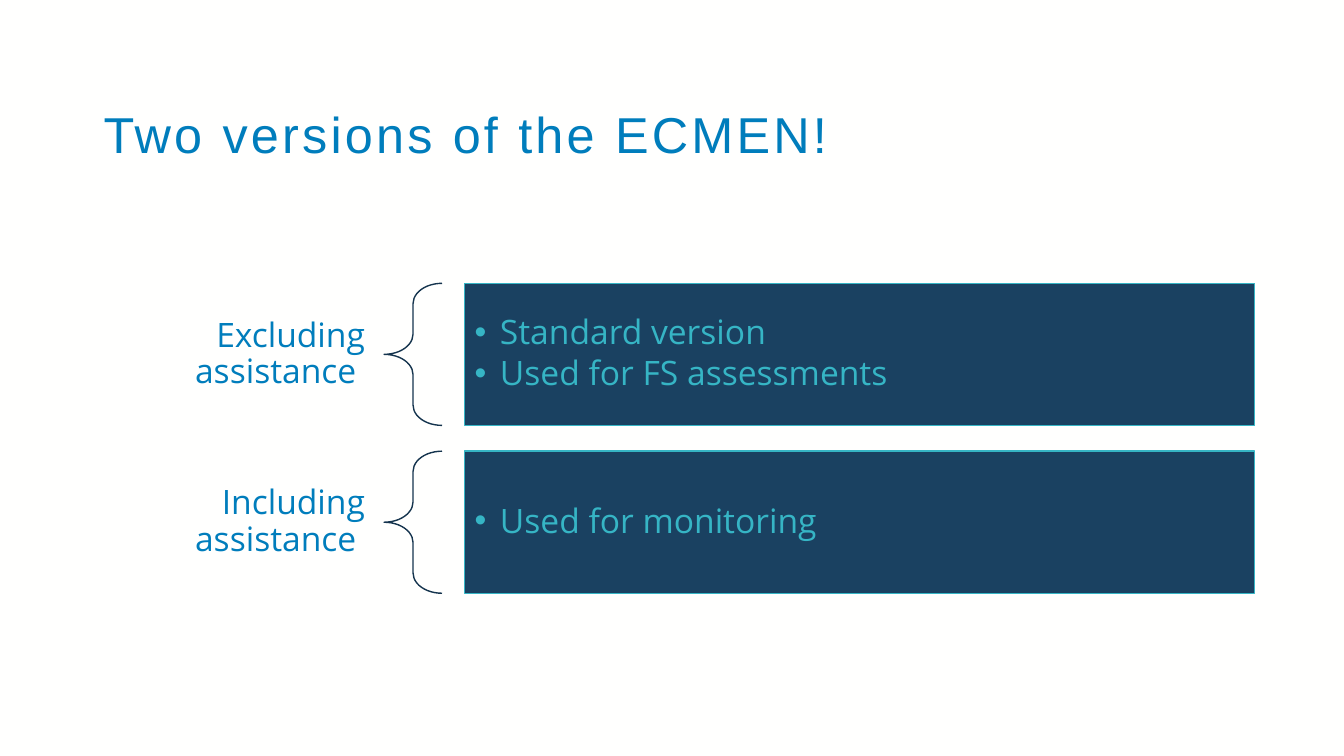
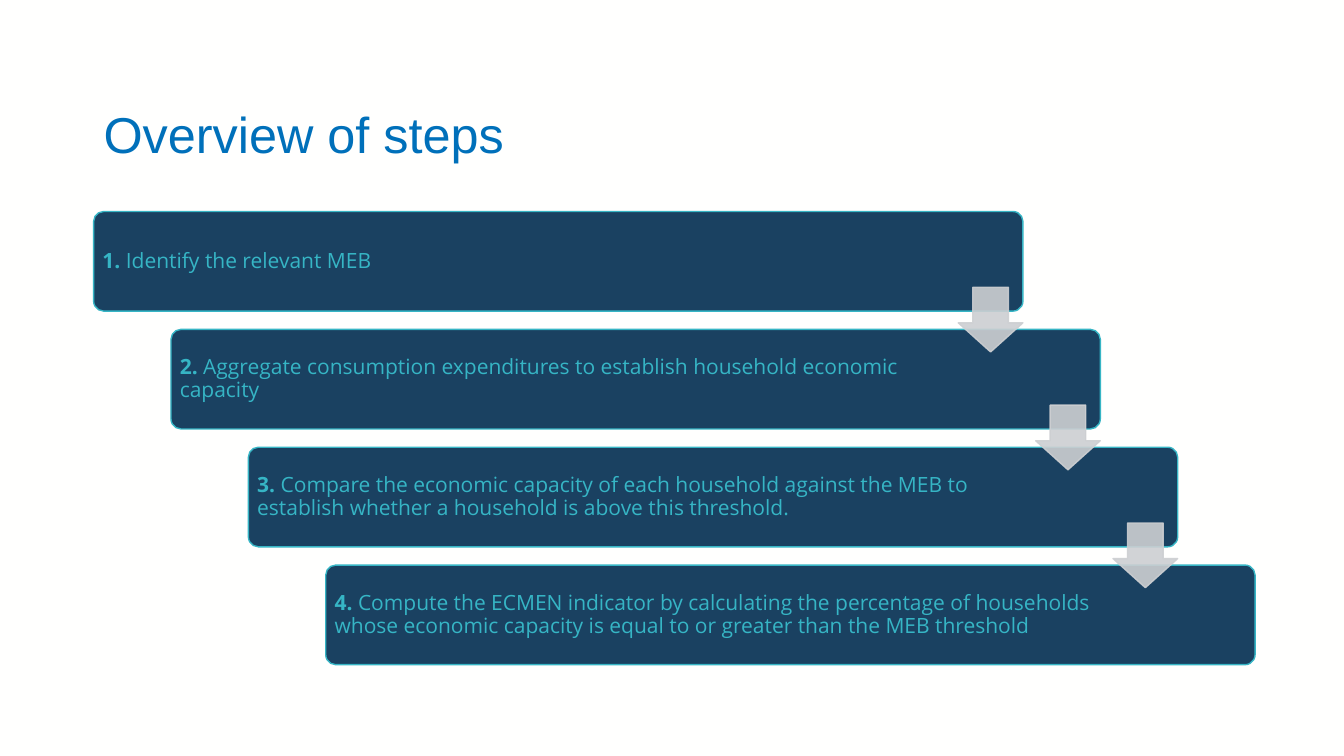
from dataclasses import dataclass

import pptx
import pptx.dml.color
import pptx.enum.shapes
import pptx.enum.text
import pptx.oxml.ns
import pptx.util
from lxml import etree

Cm = pptx.util.Cm
Pt = pptx.util.Pt
SHAPE = pptx.enum.shapes.MSO_SHAPE
ALIGN = pptx.enum.text.PP_ALIGN
qn = pptx.oxml.ns.qn

COLORS = {
    "page": "FFFFFE",
    "heading": "007DBC",
    "heading_alt": "0070BA",
    "panel": "1A4161",
    "accent": "36B5C5",
    "brace": "15344E",
    "arrow": "CDCFD2",
}
HEADING_FONT, BODY_FONT = "Arial", "Open Sans"
LEFT = 2.36  # shared left edge, in cm


@dataclass
class Area:
    left: float
    top: float
    width: float
    height: float

    def lengths(self) -> list:
        return [Cm(n) for n in (self.left, self.top, self.width, self.height)]


@dataclass
class Version:
    label: str
    points: list[str]


VERSIONS = [
    Version("Excluding assistance ", ["Standard version", "Used for FS assessments"]),
    Version("Including assistance ", ["Used for monitoring"]),
]
STEPS = [
    "Identify the relevant MEB",
    "Aggregate consumption expenditures to establish household economic capacity",
    "Compare the economic capacity of each household against the MEB to "
    "establish whether a household is above this threshold.",
    "Compute the ECMEN indicator by calculating the percentage of households "
    "whose economic capacity is equal to or greater than the MEB threshold",
]


def rgb(name: str) -> pptx.dml.color.RGBColor:
    return pptx.dml.color.RGBColor.from_string(COLORS[name])


def apply(target, formats: dict) -> None:
    for name, value in formats.items():
        setattr(target, name, value)


# Shared building blocks
def set_frame(box, insets: tuple) -> None:
    """Centre the text vertically; insets run left, top, right, bottom."""
    sides = ("margin_left", "margin_top", "margin_right", "margin_bottom")
    formats = {side: Cm(inset) for side, inset in zip(sides, insets)}
    formats |= {"word_wrap": True,
                "vertical_anchor": pptx.enum.text.MSO_ANCHOR.MIDDLE}
    apply(box.text_frame, formats)


def add_span(para, text: str, size: float, color: str,
             font: str = BODY_FONT, bold: bool = False):
    span = para.add_run()
    span.text = text
    apply(span.font, {"size": Pt(size), "name": font, "bold": bold})
    span.font.color.rgb = rgb(color)
    return span


def add_bullet(para) -> None:
    properties = para._p.get_or_add_pPr()
    indent = Cm(0.64)
    properties.set("marL", str(indent))
    properties.set("indent", str(-indent))
    etree.SubElement(properties, qn("a:buFont")).set("typeface", "Arial")
    etree.SubElement(properties, qn("a:buChar")).set("char", "•")


def add_figure(page, kind, area: Area, line: str, fill: str | None = None,
               adjustments: tuple = ()):
    figure = page.shapes.add_shape(kind, *area.lengths())
    figure.shadow.inherit = False
    for index, value in enumerate(adjustments):
        figure.adjustments[index] = value
    if fill:
        figure.fill.solid()
        figure.fill.fore_color.rgb = rgb(fill)
    else:
        figure.fill.background()
    figure.line.color.rgb = rgb(line)
    figure.line.width = Pt(1)
    return figure


def add_page(deck, title: str, color: str, tracking: float = 0):
    page = deck.slides.add_slide(deck.slide_layouts[6])
    page.background.fill.solid()
    page.background.fill.fore_color.rgb = rgb("page")
    box = page.shapes.add_textbox(*Area(LEFT, 1.85, 29.29, 3.2).lengths())
    set_frame(box, (0.25, 0.13, 0.25, 0.13))
    para = box.text_frame.paragraphs[0]
    para.line_spacing = 0.9
    span = add_span(para, title, 36, color, HEADING_FONT)
    if tracking:
        span.font._element.set("spc", str(round(tracking * 100)))
    return page


# Slide 1: a label, a brace and a panel for each version
def add_version(page, version: Version, top: float) -> None:
    height = 3.58
    label = page.shapes.add_textbox(*Area(LEFT, top, 7.32, height).lengths())
    set_frame(label, (0.48, 0.18, 0.48, 0.18))
    para = label.text_frame.paragraphs[0]
    apply(para, {"alignment": ALIGN.RIGHT, "line_spacing": 0.9})
    add_span(para, version.label, 24, "heading")

    add_figure(page, SHAPE.LEFT_BRACE, Area(9.68, top, 1.46, height),
               "brace", adjustments=(0.35, 0.5))

    panel = add_figure(page, SHAPE.RECTANGLE, Area(11.71, top, 19.91, height),
                       "accent", "panel")
    set_frame(panel, (0.25, 0.25, 0.25, 0.25))
    frame = panel.text_frame
    for index, point in enumerate(version.points):
        para = frame.add_paragraph() if index else frame.paragraphs[0]
        apply(para, {"alignment": ALIGN.LEFT, "line_spacing": 0.9,
                     "space_after": Pt(3.6)})
        add_bullet(para)
        add_span(para, point, 24, "accent")


def build_versions(deck) -> None:
    page = add_page(deck, "Two versions of the ECMEN!", "heading", 2.3)
    for index, version in enumerate(VERSIONS):
        add_version(page, version, 7.14 + index * 4.23)


# Slide 2: a staircase of cards joined by arrows
def add_step(page, number: int, text: str, area: Area) -> None:
    card = add_figure(page, SHAPE.ROUNDED_RECTANGLE, area,
                      "accent", "panel", (0.1,))
    set_frame(card, (0.15, 0.15, 3.73, 0.15))
    para = card.text_frame.paragraphs[0]
    apply(para, {"alignment": ALIGN.LEFT, "line_spacing": 0.9})
    add_span(para, f"{number}. ", 15, "accent", bold=True)
    add_span(para, text, 15, "accent")


def add_step_arrow(page, card: Area) -> None:
    size = 1.63
    area = Area(card.left + card.width - size, card.top + 1.91, size, size)
    arrow = add_figure(page, SHAPE.DOWN_ARROW, area, "arrow", "arrow", (0.55, 0.45))
    for color in arrow._element.spPr.iter(qn("a:srgbClr")):
        etree.SubElement(color, qn("a:alpha")).set("val", "90000")


def build_steps(deck) -> None:
    page = add_page(deck, "Overview of steps", "heading_alt")
    cards = [Area(LEFT + index * 1.95, 5.33 + index * 2.97, 23.42, 2.51)
             for index in range(len(STEPS))]
    for number, (text, card) in enumerate(zip(STEPS, cards), start=1):
        add_step(page, number, text, card)
    for card in cards[:-1]:
        add_step_arrow(page, card)


def main() -> None:
    deck = pptx.Presentation()
    apply(deck, {"slide_width": Cm(33.87), "slide_height": Cm(19.05)})
    build_versions(deck)
    build_steps(deck)
    deck.save("out.pptx")


if __name__ == "__main__":
    main()
